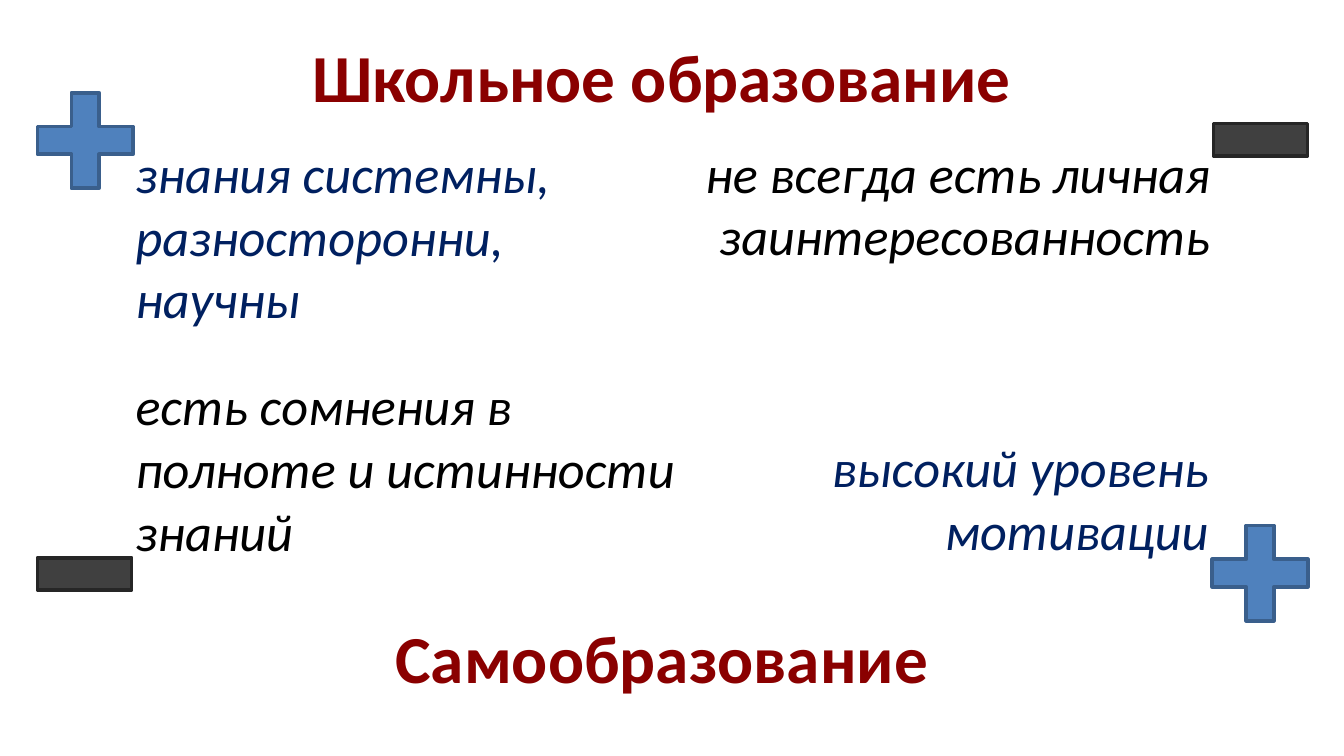
from pptx import Presentation
from pptx.dml.color import RGBColor
from pptx.enum.shapes import MSO_SHAPE as Shape
from pptx.enum.text import MSO_ANCHOR as Anchor, MSO_AUTO_SIZE as AutoSize, PP_ALIGN as Align
from pptx.util import Inches, Pt

DARK_RED, NAVY, BLACK = "8A0000", "002060", "000000"
HEADING_BOX = {"left": 2.09, "width": 5.67, "height": 0.71}


def color(hex_value):
    return RGBColor.from_string(hex_value)


def place(shape, left, top, width, height):
    shape.left, shape.top = Inches(left), Inches(top)
    shape.width, shape.height = Inches(width), Inches(height)


def write(shape, text, size, hex_color, align, bold=False, italic=False):
    frame = shape.text_frame
    frame.text = text
    frame.word_wrap = True
    frame.auto_size = AutoSize.SHAPE_TO_FIT_TEXT
    frame.vertical_anchor = Anchor.TOP
    paragraph = frame.paragraphs[0]
    paragraph.alignment = align
    font = paragraph.font
    font.name, font.size = "Calibri", Pt(size)
    font.bold, font.italic = bold, italic
    font.color.rgb = color(hex_color)


def format_heading(shape, text, top):
    place(shape, top=top, **HEADING_BOX)
    write(shape, text, 36, DARK_RED, Align.CENTER, bold=True)


def add_text_box(slide):
    return slide.shapes.add_textbox(0, 0, Inches(1), Inches(1))


def add_argument(slide, text, box, hex_color, align):
    argument = add_text_box(slide)
    place(argument, *box)
    write(argument, text, 28, hex_color, align, italic=True)


def add_sign(slide, kind, box, fill, outline):
    sign = slide.shapes.add_shape(kind, *map(Inches, box))
    sign.shadow.inherit = False
    sign.fill.solid()
    sign.fill.fore_color.rgb = color(fill)
    sign.line.color.rgb = color(outline)
    sign.line.width = Pt(2)
    return sign


def add_plus(slide, left, top):
    plus = add_sign(slide, Shape.CROSS, (left, top, 0.71, 0.71), "4F81BD", "3A5F8C")
    plus.adjustments[0] = 0.355


def add_minus(slide, left, top):
    add_sign(slide, Shape.RECTANGLE, (left, top, 0.7, 0.24), "404040", "262626")


def main():
    deck = Presentation()
    deck.slide_width = Inches(10)
    deck.slide_height = deck.slide_width * 9 // 16
    slide = deck.slides.add_slide(deck.slide_layouts.get_by_name("Title Only"))

    format_heading(slide.shapes.title, "Школьное образование", 0.21)
    format_heading(add_text_box(slide), "Самообразование", 4.54)

    add_plus(slide, 0.28, 0.69)
    add_plus(slide, 9.02, 3.91)
    add_minus(slide, 0.28, 4.15)
    add_minus(slide, 9.03, 0.92)

    arguments = [
        ("знания системны, разносторонни, научны", (0.91, 1, 3.62, 1.51), NAVY, Align.LEFT),
        ("не всегда есть личная заинтересованность", (4.61, 1, 4.49, 1.04), BLACK, Align.RIGHT),
        ("есть сомнения в полноте и истинности знаний", (0.91, 2.73, 4.49, 1.51), BLACK, Align.LEFT),
        ("высокий уровень мотивации", (5.47, 3.19, 3.62, 1.04), NAVY, Align.RIGHT),
    ]
    for argument in arguments:
        add_argument(slide, *argument)

    deck.save("out.pptx")


if __name__ == "__main__":
    main()
